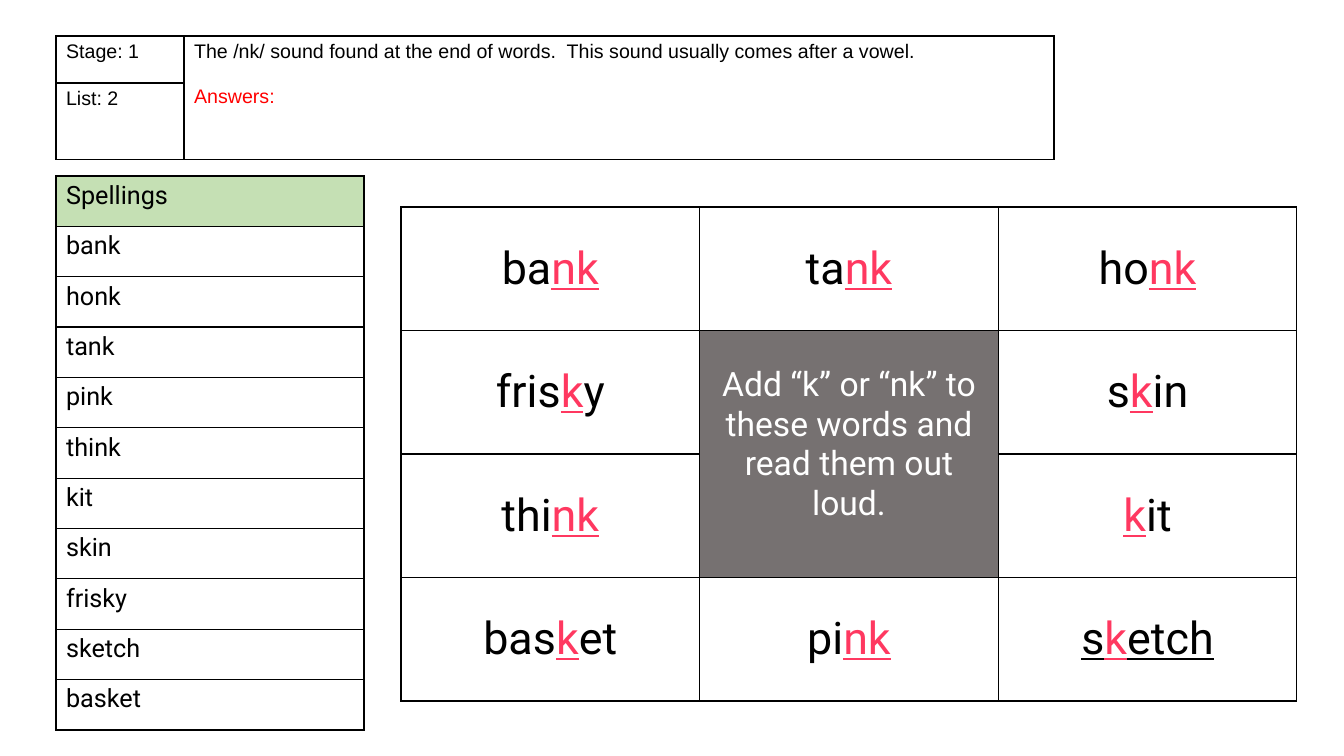
from dataclasses import dataclass

from lxml import etree
from pptx import Presentation
from pptx.dml.color import RGBColor
from pptx.enum.text import MSO_ANCHOR, PP_ALIGN
from pptx.oxml.ns import qn
from pptx.util import Emu, Pt

TOP, MIDDLE = MSO_ANCHOR.TOP, MSO_ANCHOR.MIDDLE
LEFT, CENTER = PP_ALIGN.LEFT, PP_ALIGN.CENTER
EMU_PER_PX = 914400 / 100.8


def px(length):
    return Emu(round(length * EMU_PER_PX))


@dataclass(frozen=True)
class Theme:
    black: str = "000000"
    white: str = "FFFFFF"
    red: str = "FF0000"
    pink: str = "FF3860"
    green: str = "C5E0B4"
    grey: str = "767171"
    heading_font: str = "Arial"
    word_font: str = "Roboto"
    heading_size: int = 14
    list_size: int = 18
    prompt_size: int = 24
    word_size: int = 32
    border: int = 1


class Worksheet:
    def __init__(self, slide, theme):
        self.slide = slide
        self.theme = theme

    def table(self, left, top, widths, heights):
        frame = self.slide.shapes.add_table(
            len(heights), len(widths), px(left), px(top), px(sum(widths)), px(sum(heights))
        )
        table = frame.table
        table.first_row = table.horz_banding = False
        for column, width in zip(table.columns, widths):
            column.width = px(width)
        for row, height in zip(table.rows, heights):
            row.height = px(height)
        for cell in table.iter_cells():
            self.borders(cell)
            cell.fill.background()
        return table

    def borders(self, cell):
        properties = cell._tc.get_or_add_tcPr()
        for side in ("L", "R", "T", "B"):
            line = etree.SubElement(properties, qn(f"a:ln{side}"), w=str(Pt(self.theme.border)))
            fill = etree.SubElement(line, qn("a:solidFill"))
            etree.SubElement(fill, qn("a:srgbClr"), val=self.theme.black)

    def fill(self, cell, color):
        cell.fill.solid()
        cell.fill.fore_color.rgb = RGBColor.from_string(color)

    def text(self, cell, paragraphs, font, size, align=LEFT, anchor=TOP, gap=0):
        cell.vertical_anchor = anchor
        frame = cell.text_frame
        for index, pieces in enumerate(paragraphs):
            paragraph = frame.add_paragraph() if index else frame.paragraphs[0]
            paragraph.alignment = align
            if index:
                paragraph.space_before = Pt(gap)
            for content, color, underline in pieces:
                run = paragraph.add_run()
                run.text = content
                values = {"name": font, "size": Pt(size), "underline": underline}
                for name, value in values.items():
                    setattr(run.font, name, value)
                run.font.color.rgb = RGBColor.from_string(color)

    def heading(self, cell, *lines):
        paragraphs = [[(content, color, False)] for content, color in lines]
        self.text(cell, paragraphs, self.theme.heading_font, self.theme.heading_size, gap=16)

    def word(self, cell, before, sound, after="", underline=False):
        theme = self.theme
        pieces = [
            (before, theme.black, underline),
            (sound, theme.pink, True),
            (after, theme.black, underline),
        ]
        shown = [piece for piece in pieces if piece[0]]
        self.text(cell, [shown], theme.word_font, theme.word_size, CENTER, MIDDLE)

    def prompt(self, cell, content):
        theme = self.theme
        self.fill(cell, theme.grey)
        cell.margin_top = px(35)
        pieces = [(content, theme.white, False)]
        self.text(cell, [pieces], theme.word_font, theme.prompt_size, CENTER)


SPELLINGS = [
    "Spellings", "bank", "honk", "tank", "pink", "think",
    "kit", "skin", "frisky", "sketch", "basket",
]
WORDS = {
    (0, 0): ("ba", "nk"),
    (0, 1): ("ta", "nk"),
    (0, 2): ("ho", "nk"),
    (1, 0): ("fris", "k", "y"),
    (1, 2): ("s", "k", "in"),
    (2, 0): ("thi", "nk"),
    (2, 2): ("", "k", "it"),
    (3, 0): ("bas", "k", "et"),
    (3, 1): ("pi", "nk"),
    (3, 2): ("s", "k", "etch", True),
}


def main():
    theme = Theme()
    presentation = Presentation()
    presentation.slide_width, presentation.slide_height = px(1344), px(756)
    slide = presentation.slides.add_slide(presentation.slide_layouts[6])
    worksheet = Worksheet(slide, theme)

    count = len(SPELLINGS)
    spellings = worksheet.table(56, 176, [308], [554 / count] * count)
    for row, spelling in enumerate(SPELLINGS):
        pieces = [(spelling, theme.black, False)]
        worksheet.text(spellings.cell(row, 0), [pieces], theme.word_font, theme.list_size)
    worksheet.fill(spellings.cell(0, 0), theme.green)

    header = worksheet.table(56, 36, [128, 870], [47, 76])
    header.cell(0, 1).merge(header.cell(1, 1))
    worksheet.heading(header.cell(0, 0), ("Stage: 1", theme.black))
    worksheet.heading(header.cell(1, 0), ("List: 2", theme.black))
    worksheet.heading(
        header.cell(0, 1),
        (
            "The /nk/ sound found at the end of words.  This sound usually comes after a vowel.",
            theme.black,
        ),
        ("Answers:", theme.red),
    )

    answers = worksheet.table(401, 207, [896 / 3] * 3, [494 / 4] * 4)
    answers.cell(1, 1).merge(answers.cell(2, 1))
    for position, parts in WORDS.items():
        worksheet.word(answers.cell(*position), *parts)
    worksheet.prompt(
        answers.cell(1, 1), "Add “k” or “nk” to these words and read them out loud."
    )

    presentation.save("out.pptx")


if __name__ == "__main__":
    main()
